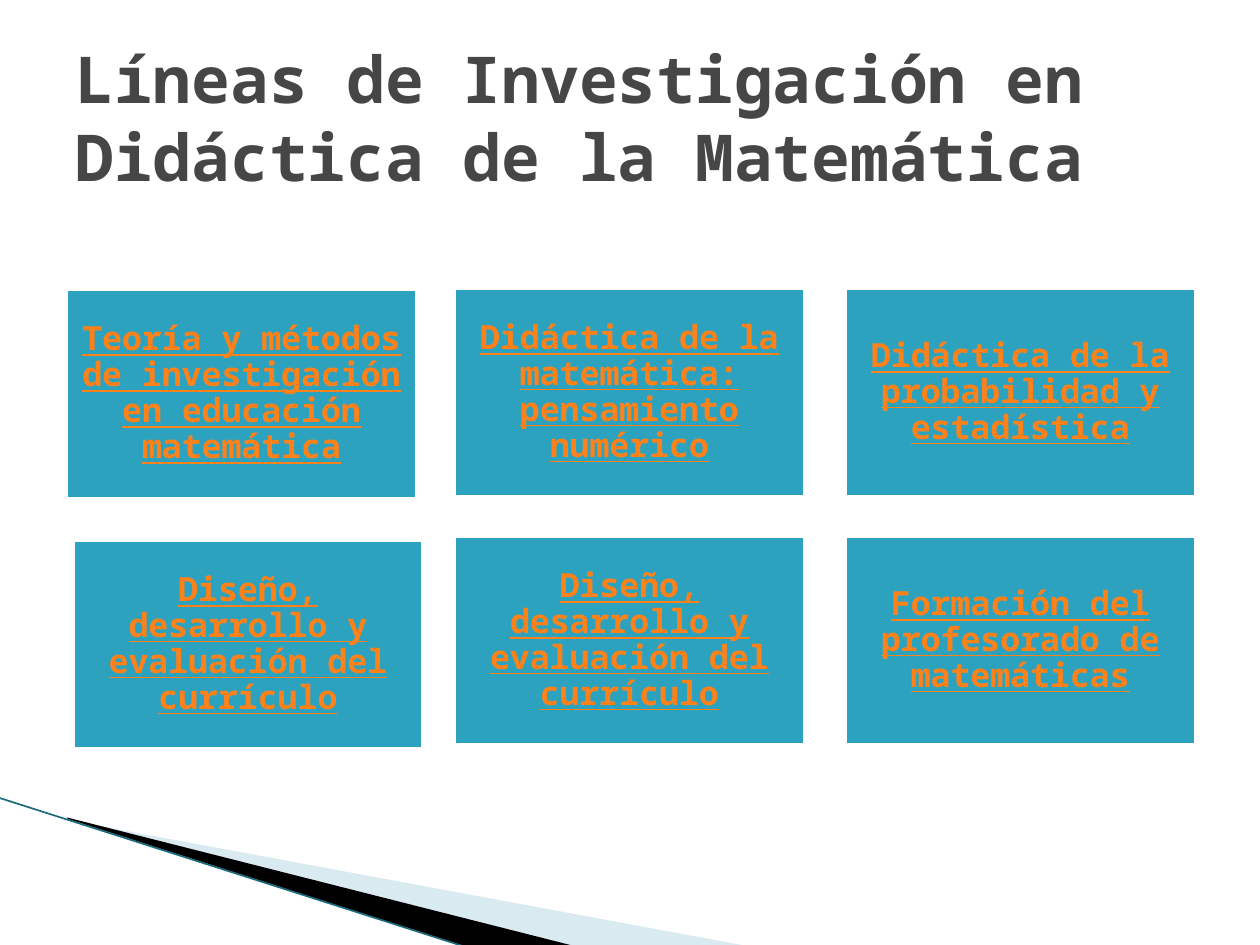
from typing import NamedTuple

from lxml.etree import SubElement
from pptx import Presentation
from pptx.dml.color import RGBColor
from pptx.enum.shapes import MSO_CONNECTOR, MSO_SHAPE
from pptx.enum.text import MSO_ANCHOR as ANCHOR, PP_ALIGN as ALIGN
from pptx.oxml.ns import qn
from pptx.util import Cm, Pt

FONT = "Noto Sans Mono"
BOX_W, BOX_H = 7.14, 4.29


class Topic(NamedTuple):
    text: str
    left: float
    top: float


class Wedge(NamedTuple):
    points: list[tuple[float, float]]
    color: str
    alpha: int


TOPICS = [
    Topic("Teoría y métodos de investigación en educación matemática", 1.3, 5.8),
    Topic("Didáctica de la matemática: pensamiento numérico", 9.12, 5.77),
    Topic("Didáctica de la probabilidad y estadística", 17, 5.77),
    Topic("Diseño, desarrollo y evaluación del currículo", 1.43, 10.85),
    Topic("Diseño, desarrollo y evaluación del currículo", 9.12, 10.77),
    Topic("Formación del profesorado de matemáticas", 17, 10.77),
]
WEDGES = [
    Wedge([(1.4, 16.54), (15.11, 19.08), (11.58, 19.08), (1.4, 16.51)], "A0CBDC", 40),
    Wedge([(1.35, 16.48), (11.61, 19.08), (9.45, 19.1), (1.37, 16.51)], "000000", 100),
]


def rgb(color: str) -> RGBColor:
    return RGBColor.from_string(color)


def set_text(tf, text: str, size: float, color: str, align: ALIGN, underline: bool = False):
    tf.word_wrap = True
    tf.vertical_anchor = ANCHOR.MIDDLE
    tf.text = text
    p = tf.paragraphs[0]
    p.alignment = align
    font = p.runs[0].font
    font.name, font.size, font.bold = FONT, Pt(size), True
    font.underline = underline
    font.color.rgb = rgb(color)
    return p


def draw_wedge(shapes, wedge: Wedge) -> None:
    points = [(Cm(x), Cm(y)) for x, y in wedge.points]
    builder = shapes.build_freeform(*points[0])
    builder.add_line_segments(points[1:], close=True)
    sp = builder.convert_to_shape()
    sp.shadow.inherit = False
    sp.fill.solid()
    sp.fill.fore_color.rgb = rgb(wedge.color)
    sp.line.fill.background()
    if wedge.alpha < 100:
        clr = sp.fill._xPr.find(qn("a:solidFill")).find(qn("a:srgbClr"))
        SubElement(clr, qn("a:alpha")).set("val", str(wedge.alpha * 1000))


def draw_edge(shapes) -> None:
    line = shapes.add_connector(
        MSO_CONNECTOR.STRAIGHT, Cm(-0.03), Cm(16.08), Cm(9.42), Cm(19.1)
    )
    line.line.color.rgb = rgb("1A6A7E")
    line.line.width = Pt(0.95)
    SubElement(line._element.spPr, qn("a:effectLst"))


def draw_topic(shapes, topic: Topic) -> None:
    sp = shapes.add_shape(
        MSO_SHAPE.RECTANGLE, Cm(topic.left), Cm(topic.top), Cm(BOX_W), Cm(BOX_H)
    )
    sp.shadow.inherit = False
    sp.fill.solid()
    sp.fill.fore_color.rgb = rgb("2DA2BF")
    sp.line.color.rgb = rgb("FFFFFF")
    sp.line.width = Pt(4.33)
    tf = sp.text_frame
    tf.margin_left = tf.margin_right = tf.margin_top = tf.margin_bottom = Cm(0.2)
    p = set_text(tf, topic.text, 19, "FF8119", ALIGN.CENTER, underline=True)
    p.line_spacing = 0.9


def main() -> None:
    prs = Presentation()
    prs.slide_width, prs.slide_height = Cm(25.4), Cm(19.05)
    s = prs.slides.add_slide(prs.slide_layouts[6])
    for wedge in WEDGES:
        draw_wedge(s.shapes, wedge)
    draw_edge(s.shapes)
    for topic in TOPICS:
        draw_topic(s.shapes, topic)
    title = s.shapes.add_textbox(Cm(1.27), Cm(0.76), Cm(22.86), Cm(3.18))
    set_text(
        title.text_frame,
        "Líneas de Investigación en Didáctica de la Matemática",
        36.9, "464646", ALIGN.LEFT,
    )
    prs.save("out.pptx")


if __name__ == "__main__":
    main()
